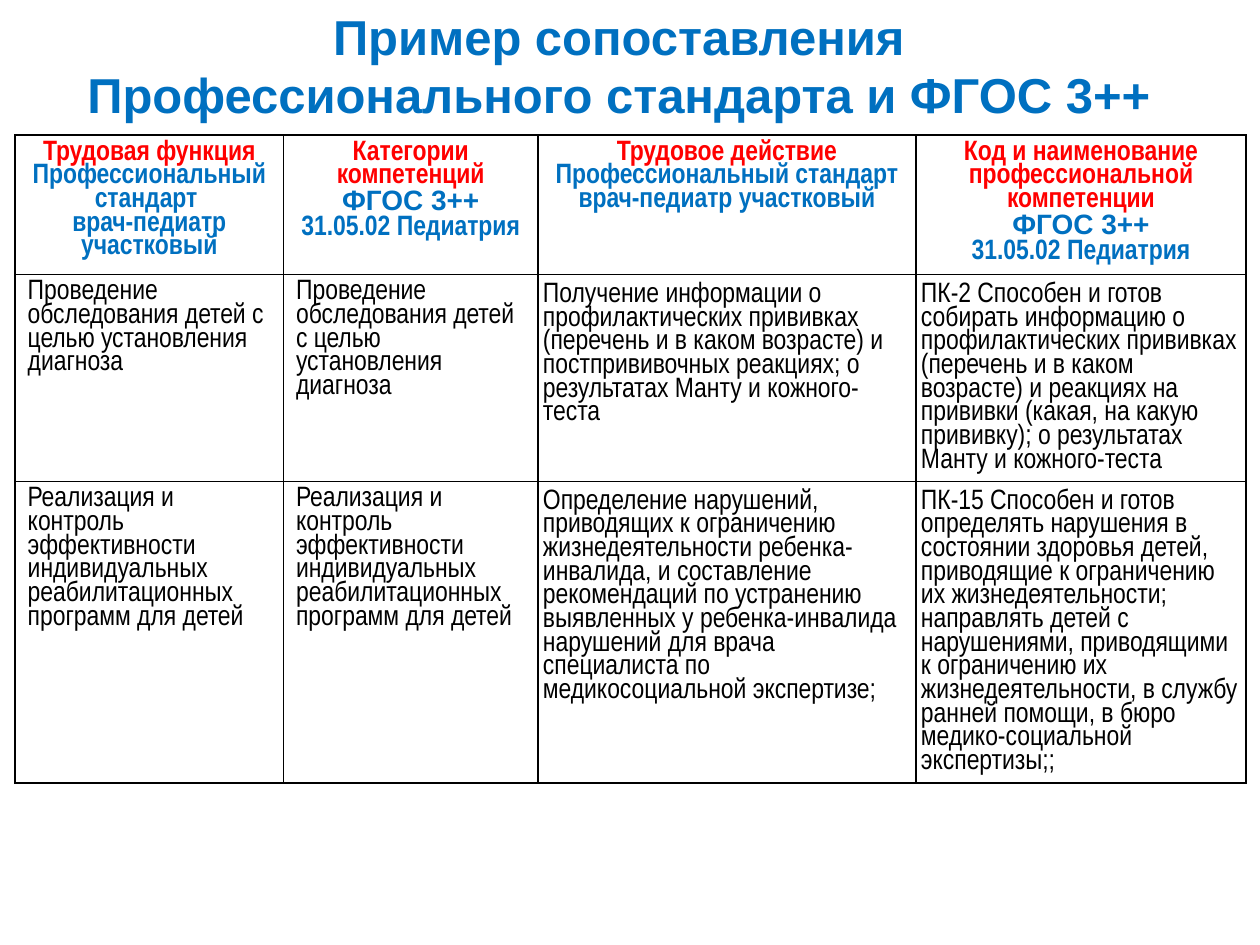
import pptx
import pptx.dml.color
import pptx.enum.text
import pptx.oxml
import pptx.oxml.ns
import pptx.util

Inches = pptx.util.Inches
Pt = pptx.util.Pt
ALIGN = pptx.enum.text.PP_ALIGN
ANCHOR = pptx.enum.text.MSO_ANCHOR

COLORS = {"blue": "0070C0", "red": "FF0000", "black": "000000", "white": "FFFFFF"}
BODY_FONT = "Arial Narrow"
TITLE_FONT = "Arial"
TIGHT_MARGINS = (0.04, 0.07, 0.04, 0.07)


def rgb(name):
    return pptx.dml.color.RGBColor.from_string(COLORS[name])


def write(paragraph, text, font=BODY_FONT, size=16, color="black", bold=False,
          align=ALIGN.LEFT, spacing=0.9):
    paragraph.text = text
    paragraph.alignment = align
    paragraph.line_spacing = spacing
    for run in paragraph.runs:
        run.font.name = font
        run.font.size = Pt(size)
        run.font.bold = bold
        run.font.color.rgb = rgb(color)


class SlideBuilder:
    def __init__(self, slide):
        self.slide = slide

    def title(self, text, left, top, width, height):
        shape = self.slide.shapes.title
        shape.left, shape.top = Inches(left), Inches(top)
        shape.width, shape.height = Inches(width), Inches(height)
        frame = shape.text_frame
        frame.auto_size = pptx.enum.text.MSO_AUTO_SIZE.NONE
        frame.vertical_anchor = ANCHOR.MIDDLE
        write(frame.paragraphs[0], text, font=TITLE_FONT, size=28, color="blue",
              bold=True, align=ALIGN.CENTER, spacing=1.0)

    def table(self, left, top, widths, heights):
        table = self.slide.shapes.add_table(
            len(heights), len(widths), Inches(left), Inches(top),
            Inches(sum(widths)), Inches(sum(heights))).table
        table.first_row = table.horz_banding = False
        for column, width in zip(table.columns, widths):
            column.width = Inches(width)
        for row, height in zip(table.rows, heights):
            row.height = Inches(height)
        return table

    def cell(self, cell, lines, margins=None):
        """Fill a cell with (text, format) lines, one paragraph each."""
        frame = cell.text_frame
        for index, (text, style) in enumerate(lines):
            paragraph = frame.add_paragraph() if index else frame.paragraphs[0]
            write(paragraph, text, **style)
        if margins:
            (cell.margin_left, cell.margin_top,
             cell.margin_right, cell.margin_bottom) = map(Inches, margins)
        self.borders(cell)
        cell.fill.solid()
        cell.fill.fore_color.rgb = rgb("white")

    def borders(self, cell):
        properties = cell._tc.get_or_add_tcPr()
        for side in ("lnL", "lnR", "lnT", "lnB"):
            properties.append(pptx.oxml.parse_xml(
                f'<a:{side} {pptx.oxml.ns.nsdecls("a")} w="{Pt(1)}"><a:solidFill>'
                f'<a:srgbClr val="{COLORS["black"]}"/></a:solidFill></a:{side}>'))


HEADING = {"bold": True, "align": ALIGN.CENTER}
RED = {**HEADING, "color": "red"}
BLUE = {**HEADING, "color": "blue"}
STANDARD = [("ФГОС 3++", {**BLUE, "font": TITLE_FONT}), ("31.05.02 Педиатрия", BLUE)]
DOCTOR = ("врач-педиатр участковый", BLUE)

HEADERS = [
    [("Трудовая функция", RED), ("Профессиональный стандарт ", BLUE), DOCTOR],
    [("Категории компетенций", RED), *STANDARD],
    [("Трудовое действие", RED), ("Профессиональный стандарт", BLUE), DOCTOR],
    [("Код и наименование профессиональной компетенции", RED), *STANDARD],
]

# Labour function (also the competence category), labour action, competence
COMPARISONS = [
    ("Проведение обследования детей с целью установления диагноза",
     "Получение информации о профилактических прививках (перечень и в каком "
     "возрасте) и постпрививочных реакциях; о результатах Манту и кожного-теста",
     "ПК-2 Способен и готов собирать информацию о профилактических прививках "
     "(перечень и в каком возрасте) и реакциях на прививки (какая, на какую "
     "прививку); о результатах Манту и кожного-теста"),
    ("Реализация и контроль эффективности индивидуальных реабилитационных "
     "программ для детей",
     "Определение нарушений, приводящих к ограничению жизнедеятельности "
     "ребенка-инвалида, и составление рекомендаций по устранению выявленных у "
     "ребенка-инвалида нарушений для врача специалиста по медикосоциальной "
     "экспертизе;",
     "ПК-15 Способен и готов определять нарушения в состоянии здоровья детей, "
     "приводящие к ограничению их жизнедеятельности; направлять детей с "
     "нарушениями, приводящими к ограничению их жизнедеятельности, в службу "
     "ранней помощи, в бюро медико-социальной экспертизы;;"),
]


def main():
    presentation = pptx.Presentation()
    presentation.slide_width, presentation.slide_height = Inches(10), Inches(7.5)
    title_only = presentation.slide_layouts[5]
    builder = SlideBuilder(presentation.slides.add_slide(title_only))

    builder.title("Пример сопоставления \vПрофессионального стандарта и ФГОС 3++ ",
                  0.12, 0.05, 9.69, 0.93)
    table = builder.table(0.12, 1.07, widths=(2.13, 2.02, 3, 2.62),
                          heights=(1.11, 1.64, 2.39))
    for column, lines in enumerate(HEADERS):
        builder.cell(table.cell(0, column), lines)
    for row, (function, action, competence) in enumerate(COMPARISONS, start=1):
        for column, text in enumerate((function, function, action, competence)):
            margins = TIGHT_MARGINS if column >= 2 else None
            builder.cell(table.cell(row, column), [(text, {})], margins)

    presentation.save("out.pptx")


if __name__ == "__main__":
    main()
